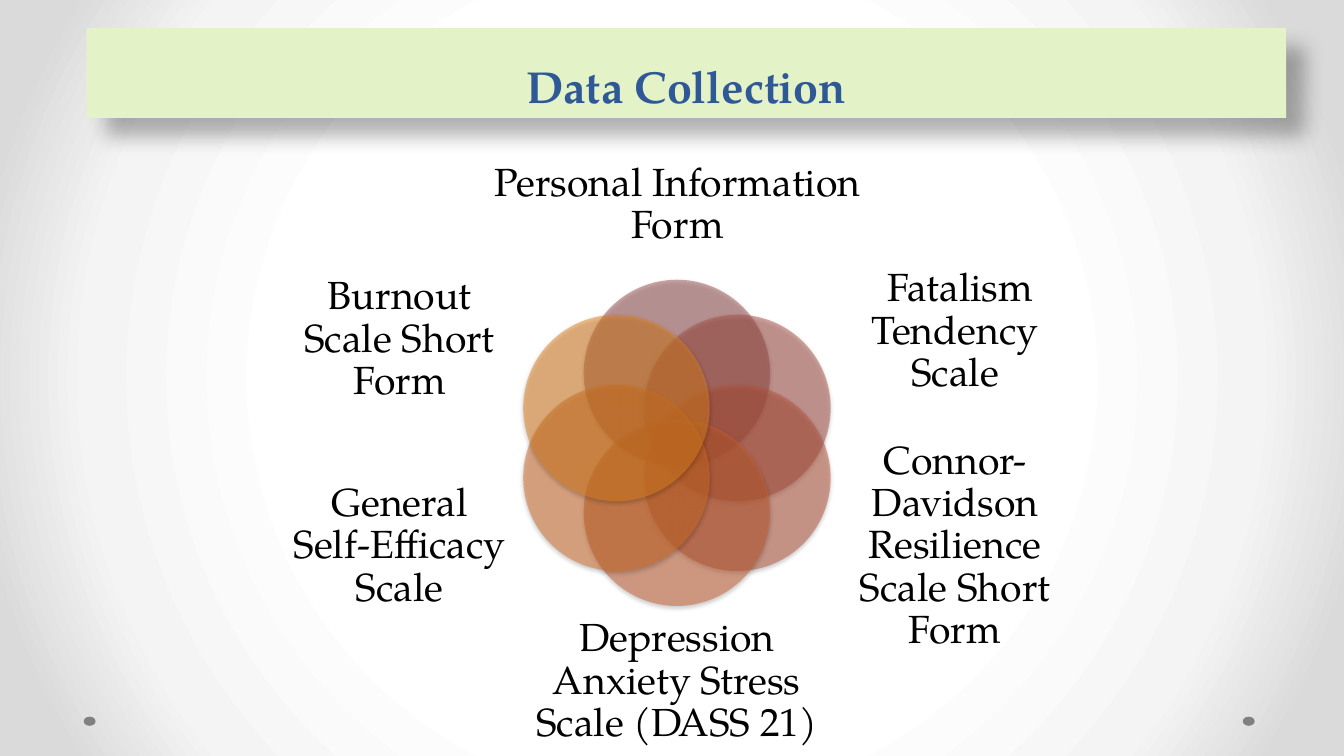
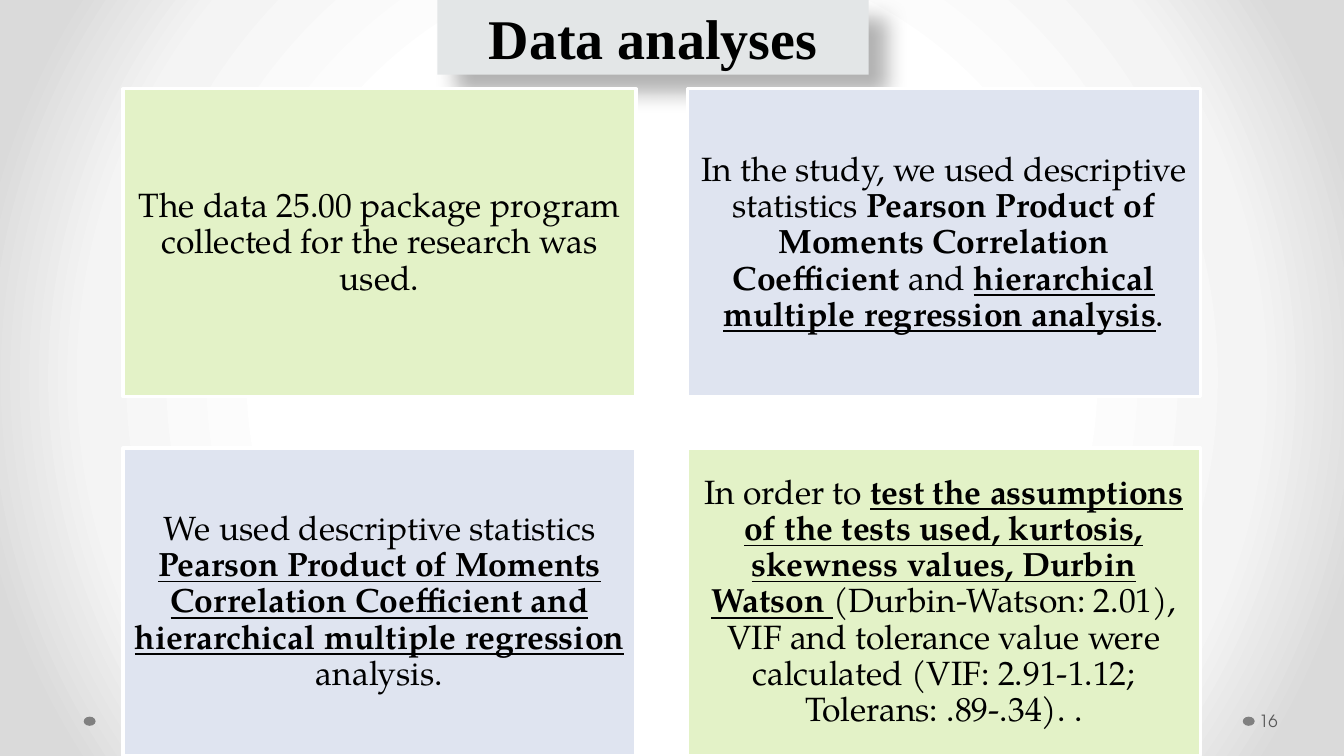
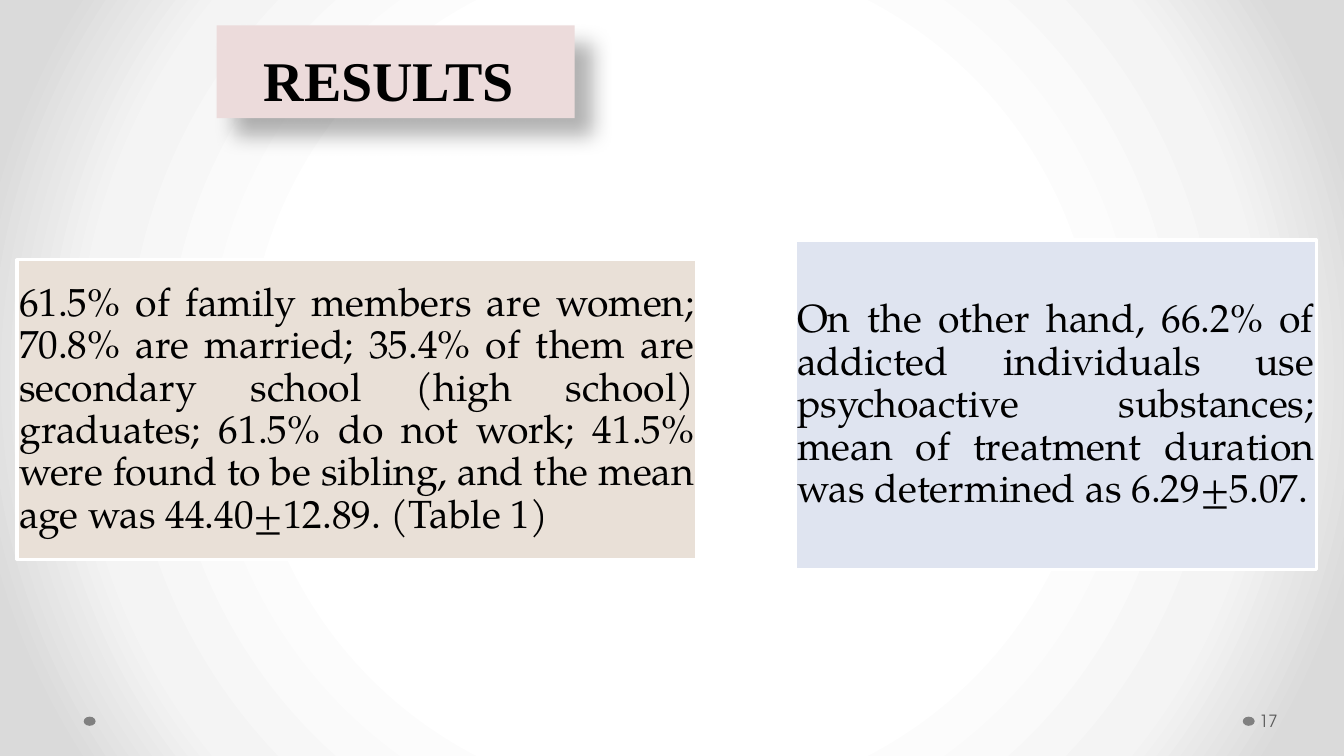
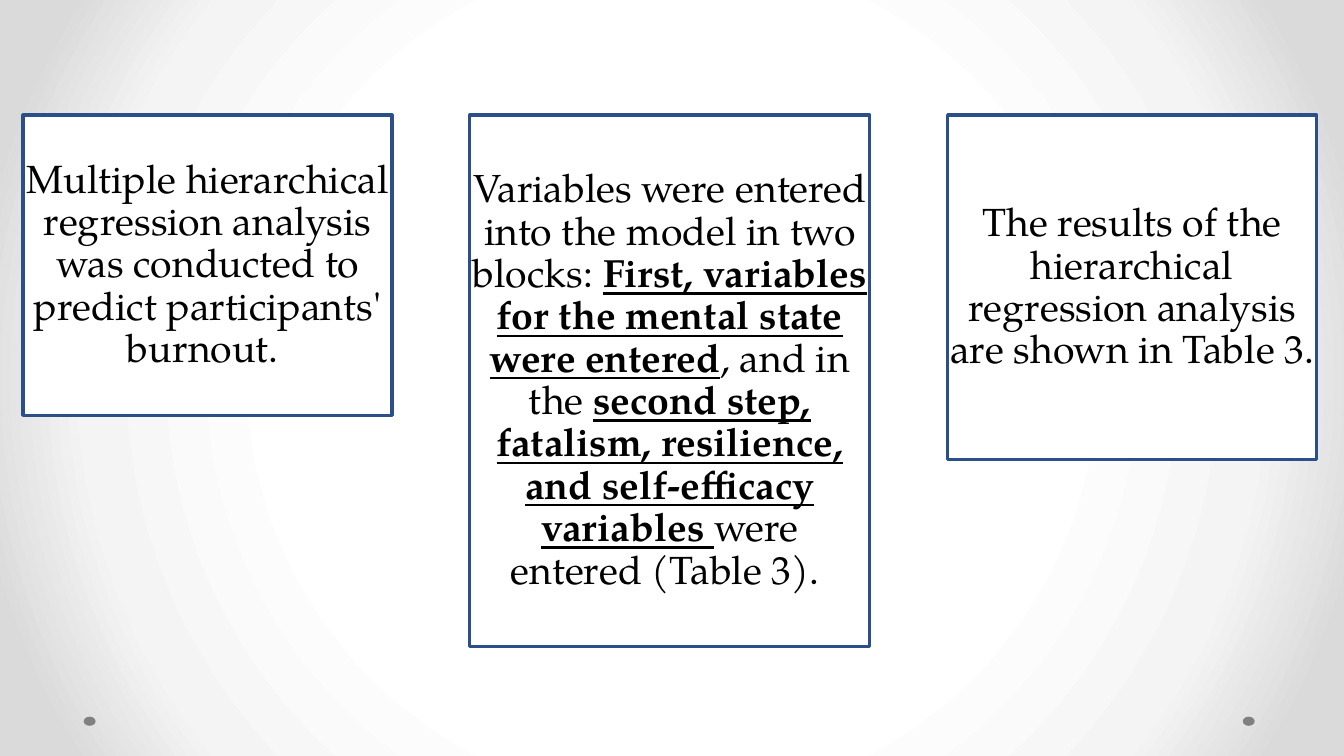
"""Builds four slides on data collection, data analyses and results."""
from math import cos, radians, sin

from pptx import Presentation
from pptx.dml.color import RGBColor
from pptx.enum.shapes import MSO_SHAPE as Preset
from pptx.enum.text import MSO_ANCHOR as Anchor, MSO_AUTO_SIZE as AutoSize, PP_ALIGN as Align
from pptx.oxml import parse_xml
from pptx.oxml.ns import nsdecls, qn
from pptx.util import Cm, Pt

COLORS = {
    "black": "000000", "white": "FFFFFF", "number": "595959", "dot": "808080",
    "title": "2F5897", "outline": "2B5089",
    "green": "E3F2C7", "lilac": "DFE4F0", "grey": "E3E6E7", "rose": "ECDBDB", "sand": "E9E0D7",
}
PETALS = ["9C5252", "AB5248", "BB573D", "CB6032", "D9702A", "E68422"]
BACKGROUND_STOPS = [(50, "FFFFFF"), (76, "F4F4F4"), (92, "DADADA")]
BODY_FONT, HEADING_FONT, NUMBER_FONT = "TeX Gyre Pagella", "Times New Roman", "TeX Gyre Adventor"


def write(shape, text, font=BODY_FONT, size=28, color="black", bold=False, align=Align.CENTER,
          anchor=Anchor.MIDDLE, spacing=0.9, insets=(0, 0, 0, 0)):
    """Fill a shape with one paragraph; text is a string or (text, style) runs, style from b and u."""
    frame = shape.text_frame
    frame.word_wrap = True
    frame.auto_size = AutoSize.NONE
    frame.vertical_anchor = anchor
    frame.margin_left, frame.margin_top, frame.margin_right, frame.margin_bottom = map(Cm, insets)
    paragraph = frame.paragraphs[0]
    paragraph.alignment = align
    paragraph.line_spacing = spacing
    for words, style in [(text, "")] if isinstance(text, str) else text:
        run = paragraph.add_run()
        run.text = words
        run.font.name = font
        run.font.size = Pt(size)
        run.font.bold = bold or "b" in style
        run.font.underline = "u" in style
        run.font.color.rgb = RGBColor.from_string(COLORS[color])


class Deck:
    """Holds the shared style and the current slide."""

    def __init__(self):
        """Set the slide size and the master background."""
        self.presentation = Presentation()
        self.presentation.slide_width = Cm(33.87)
        self.presentation.slide_height = Cm(19.05)
        self.slide = None
        self.set_background()

    def set_background(self):
        """Give the master a circular gradient."""
        master = self.presentation.slide_master
        master.background.fill.gradient()
        stops = "".join(f'<a:gs pos="{position * 1000}"><a:srgbClr val="{color}"/></a:gs>'
                        for position, color in BACKGROUND_STOPS)
        gradient = parse_xml(
            f'<a:gradFill {nsdecls("a")} rotWithShape="1"><a:gsLst>{stops}</a:gsLst><a:path path="circle">'
            '<a:fillToRect l="50000" t="50000" r="50000" b="50000"/></a:path></a:gradFill>')
        plain = master.element.xpath("p:cSld/p:bg/p:bgPr/a:gradFill")[0]
        plain.getparent().replace(plain, gradient)

    def add_slide(self, titled=True):
        """Start a slide; the first one also places the dots on the master."""
        layout = self.presentation.slide_layouts[5 if titled else 6]
        self.slide = self.presentation.slides.add_slide(layout)
        if len(self.presentation.slides) == 1:
            for number, left in enumerate((31.32, 2.11), 21):
                dot = self.shape((left, 18.06, 0.3, 0.23), COLORS["dot"], Preset.OVAL)
                dot.element.xpath(".//p:cNvPr")[0].set("id", str(number))
                self.presentation.slide_master.shapes.element.append(dot.element)

    def shape(self, box, fill, preset=Preset.RECTANGLE, line=None):
        """Add a preset shape with a plain fill and an optional outline."""
        shape = self.slide.shapes.add_shape(preset, *map(Cm, box))
        shape.shadow.inherit = False
        shape.fill.solid()
        shape.fill.fore_color.rgb = RGBColor.from_string(fill)
        if line:
            shape.line.color.rgb = RGBColor.from_string(COLORS[line])
            shape.line.width = Pt(2.25)
        else:
            shape.line.fill.background()
        return shape

    def shadow(self, shape, opacity, blur, distance, angle):
        """Cast a black shadow, sized in points."""
        shape.shadow.inherit = False
        shape.element.spPr.find(qn("a:effectLst")).append(parse_xml(
            f'<a:outerShdw {nsdecls("a")} blurRad="{Pt(blur)}" dist="{Pt(distance)}" '
            f'dir="{angle * 60000}" algn="tl" rotWithShape="0"><a:srgbClr val="000000">'
            f'<a:alpha val="{opacity * 1000}"/></a:srgbClr></a:outerShdw>'))

    def title(self, text, box, fill, **style):
        """Format the title placeholder as a band with a shadow."""
        title = self.slide.shapes.title
        title.left, title.top, title.width, title.height = map(Cm, box)
        title.fill.solid()
        title.fill.fore_color.rgb = RGBColor.from_string(COLORS[fill])
        self.shadow(title, 30, 15, 18, 45)
        heading = {"font": HEADING_FONT, "size": 40, "bold": True, "spacing": 1.0,
                   "insets": (0.25, 0.13, 0.25, 0.13)}
        write(title, text, **(heading | style))

    def card(self, text, box, fill, line="white", inset=0.05, **style):
        """Add a filled and outlined box with text."""
        write(self.shape(box, COLORS[fill], line=line), text, insets=(inset,) * 4, **style)

    def label(self, text, box, **style):
        """Add a text box."""
        write(self.slide.shapes.add_textbox(*map(Cm, box)), text, **style)

    def petal(self, box, color):
        """Add a half transparent circle."""
        petal = self.shape(box, color, Preset.OVAL)
        petal.element.spPr.find(".//" + qn("a:srgbClr")).append(
            parse_xml(f'<a:alpha {nsdecls("a")} val="50000"/>'))
        self.shadow(petal, 38, 3.1, 1.6, 90)

    def page_number(self, number):
        """Add the page number beside the right dot."""
        self.label(str(number), (31.65, 17.65, 2.08, 1.02), font=NUMBER_FONT, size=12, color="number",
                   align=Align.LEFT, spacing=1.0, insets=(0.08, 0.13, 0.13, 0.13))


def add_collection(deck):
    """Show the six scales around a ring of circles."""
    deck.add_slide()
    deck.title("Data Collection", (2.18, 0.71, 30.23, 2.26), "green", font=BODY_FONT, size=32,
               color="title", anchor=Anchor.BOTTOM)
    center_x, center_y, ring, diameter = 17.06, 11.16, 1.76, 4.7
    left, right, width = 7.29, 21.29, 5.56
    scales = [
        ("Personal Information Form", (12.45, 3.48, 9.25, 3.35)),
        (" Fatalism Tendency Scale", (right, 6.6, width, 3.51)),
        ("Connor-Davidson Resilience Scale Short Form", (right, 11.81, width, 3.91)),
        ("Depression Anxiety Stress Scale (DASS 21)", (13.36, 15.57, 7.39, 3.2)),
        ("General Self-Efficacy Scale", (left, 11.81, width, 3.91)),
        ("Burnout Scale Short Form", (left, 6.6, width, 3.91)),
    ]
    for index, (color, (text, box)) in enumerate(zip(PETALS, scales)):
        angle = radians(360 / len(scales) * index)
        deck.petal((center_x + ring * sin(angle) - diameter / 2,
                    center_y - ring * cos(angle) - diameter / 2, diameter, diameter), color)
        deck.label(text, box)


def add_analyses(deck):
    """Show the analyses in a grid of two by two cards."""
    deck.add_slide()
    deck.title("Data analyses", (11.02, 0, 10.87, 1.88), "grey")
    deck.page_number(16)
    cards = [
        ("The data 25.00 package program collected for the research was used.", "green"),
        ([("In the study, we used descriptive statistics ", ""),
          ("Pearson Product of Moments Correlation Coefficient ", "b"), ("and ", ""),
          ("hierarchical multiple regression analysis", "bu"), (".", "")], "lilac"),
        ([("We used descriptive statistics ", ""),
          ("Pearson Product of Moments Correlation Coefficient and hierarchical multiple regression ", "bu"),
          ("analysis.", "")], "lilac"),
        ([("In order to ", ""),
          ("test the assumptions of the tests used, kurtosis, skewness values, Durbin Watson ", "bu"),
          ("(Durbin-Watson: 2.01), VIF and tolerance value were calculated "
           "(VIF: 2.91-1.12; Tolerans: .89-.34). .", "")], "green"),
    ]
    width, height, gap = 12.93, 7.76, 1.29
    for index, (text, fill) in enumerate(cards):
        row, column = divmod(index, 2)
        deck.card(text, (3.1 + column * (width + gap), 2.24 + row * (height + gap), width, height),
                  fill, inset=0.25, size=24)


def add_results(deck):
    """Show the sample in two cards."""
    deck.add_slide()
    deck.title("RESULTS ", (5.46, 0.64, 9.02, 2.34), "rose", anchor=Anchor.BOTTOM, spacing=Pt(58))
    deck.page_number(17)
    deck.card("61.5% of family members are women; 70.8% are married; 35.4% of them are secondary school "
              "(high school) graduates; 61.5% do not work; 41.5% were found to be sibling, and the mean "
              "age was 44.40±12.89. (Table 1)", (0.43, 6.55, 17.12, 7.54), "sand", align=Align.JUSTIFY)
    deck.card("On the other hand, 66.2% of addicted individuals use psychoactive substances; mean of "
              "treatment duration was determined as 6.29±5.07.", (20.04, 6.05, 13.13, 8.31), "lilac",
              align=Align.JUSTIFY)


def add_regression(deck):
    """Show the regression steps in three outlined cards."""
    deck.add_slide(titled=False)
    cards = [
        ("Multiple hierarchical regression analysis was conducted to predict participants' burnout. ",
         9.3, 7.57),
        ([("Variables were entered into the model in two blocks: ", ""),
          ("First, variables for the mental state were entered", "bu"), (", and in the ", ""),
          ("second step, fatalism, resilience, and self-efficacy variables ", "bu"),
          ("were entered (Table 3). ", "")], 10.08, 13.39),
        ("The results of the hierarchical regression analysis are shown in Table 3.", 9.3, 8.69),
    ]
    left, gap = 0.58, 1.96
    for text, width, height in cards:
        deck.card(text, (left, 2.9, width, height), "white", line="outline")
        left += width + gap


def main():
    """Build and save the slides."""
    deck = Deck()
    for add in (add_collection, add_analyses, add_results, add_regression):
        add(deck)
    deck.presentation.save("out.pptx")


if __name__ == "__main__":
    main()
